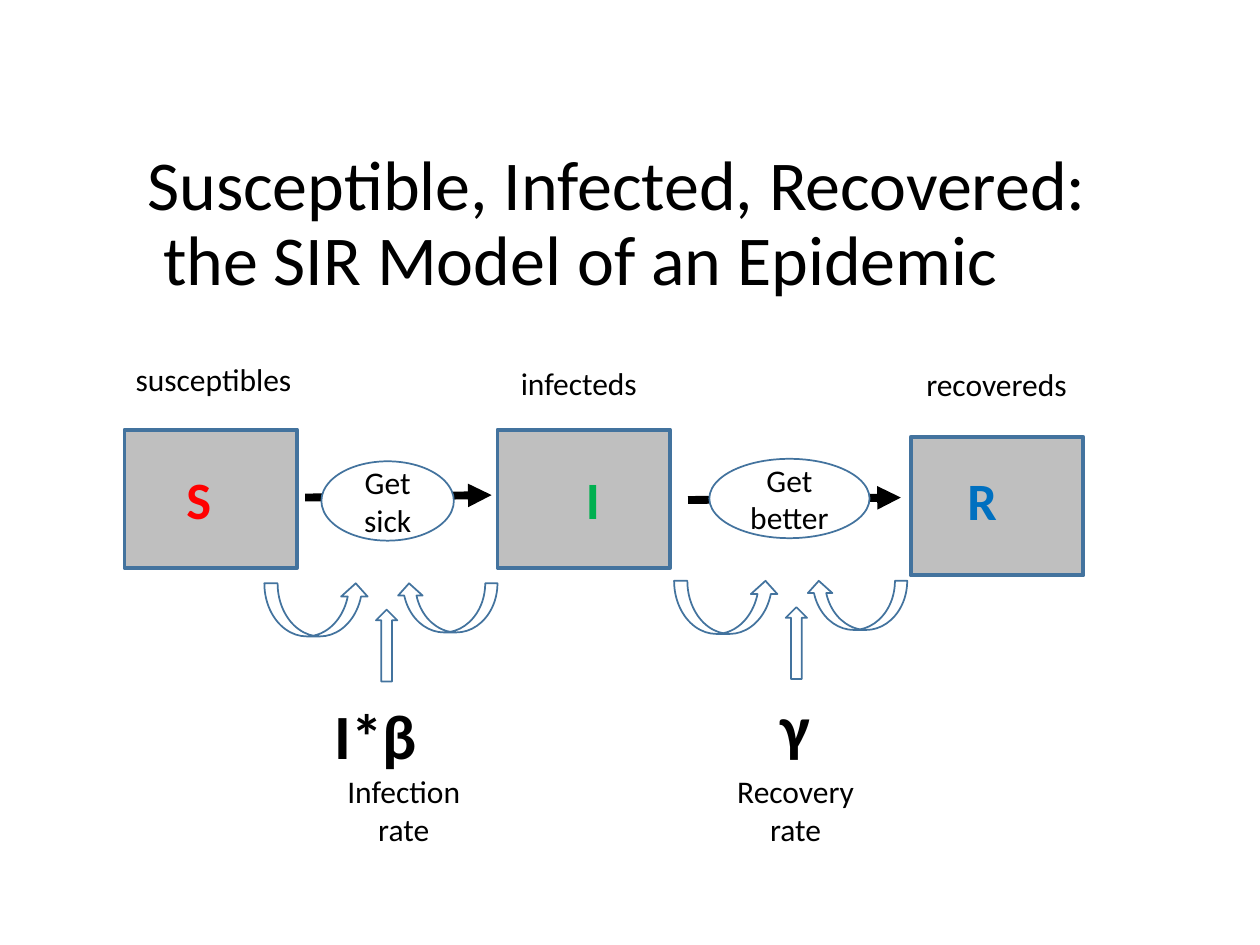
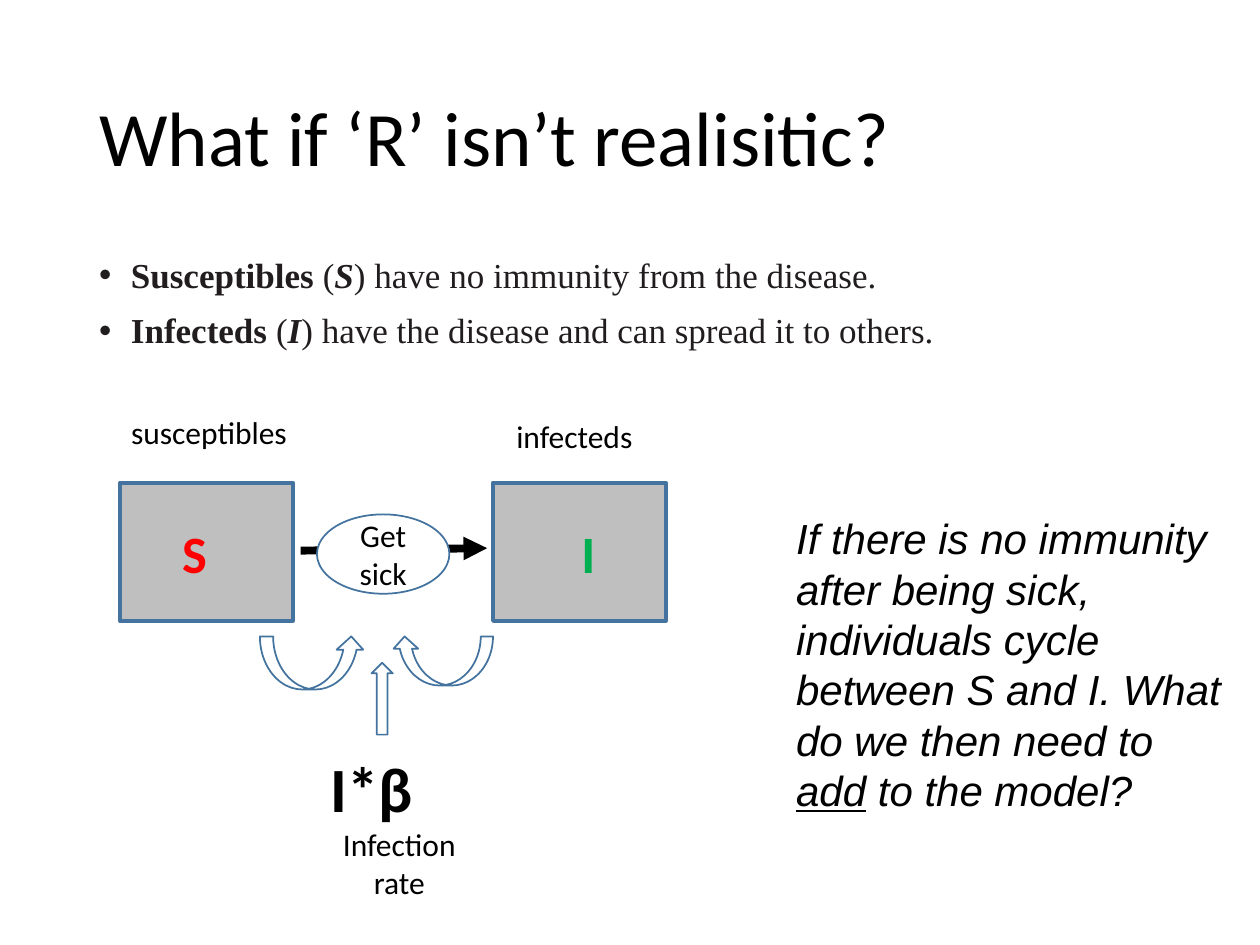
from dataclasses import dataclass

from pptx import Presentation
from pptx import util as u
from pptx.dml.color import RGBColor
from pptx.enum import shapes, text
from pptx.oxml import ns
from pptx.oxml import xmlchemy as xml

COLOURS = {
    "black": "000000",
    "body": "211D1E",
    "white": "FFFFFF",
    "outline": "43739E",
    "box": "BFBFBF",
    "susceptible": "FF0000",
    "infected": "00B050",
    "recovered": "0070C0",
}
SANS, SERIF, ASIDE = "Calibri", "Times New Roman", "Arial"
BOX_SIZE = (3.48, 2.79)
LETTER_SIZE = (2.51, 1.55)
RATE_SIZE = (3.76, 1.8)
OVAL_HEIGHT = 1.6
RATE_NAME_WIDTH = 4.24
KIND = shapes.MSO_SHAPE


@dataclass(frozen=True)
class Span:
    words: str
    bold: bool = False
    italic: bool = False
    underline: bool = False


@dataclass(frozen=True)
class Style:
    size: float
    font: str = SANS
    colour: str = "black"


@dataclass(frozen=True)
class Compartment:
    letter: str
    name: str
    colour: str
    box: tuple[float, float]
    letter_at: tuple[float, float]
    name_at: tuple[float, float]
    name_width: float


@dataclass(frozen=True)
class Flow:
    """A step between two compartments, with the inputs that drive it."""
    action: str
    action_at: tuple[float, float]
    action_width: float
    start: tuple[float, float]
    end: tuple[float, float]
    inputs_at: tuple[float, float]
    rate: str
    rate_at: tuple[float, float]
    rate_name: str
    rate_name_at: tuple[float, float]


SUSCEPTIBLE = Compartment("S", "susceptibles", "susceptible",
                          (2.51, 8.66), (3.51, 9.3), (1.37, 6.83), 5.87)
INFECTED = Compartment("I", "infecteds", "infected",
                       (10.03, 8.66), (11.56, 9.3), (9.55, 6.91), 4.24)
RECOVERED = Compartment("R", "recovereds", "recovered",
                        (18.36, 8.81), (19.25, 9.32), (17.6, 6.93), 4.98)
INFECTION = Flow("Get sick", (6.48, 9.3), 2.67, (6.15, 10.03), (9.91, 9.98),
                 (5.33, 11.76), "I*β", (6.5, 13.92),
                 "Infection rate", (6.02, 15.52))
RECOVERY = Flow("Get better", (14.3, 9.25), 3.23, (13.87, 10.08), (18.16, 10.03),
                (13.59, 11.71), "γ", (15.49, 13.74),
                "Recovery rate", (13.92, 15.52))


def rgb(name: str) -> RGBColor:
    return RGBColor.from_string(COLOURS[name])


def write(frame, paragraphs: list[list[Span]], style: Style) -> None:
    frame.word_wrap = True
    for number, spans in enumerate(paragraphs):
        para = frame.paragraphs[0] if number == 0 else frame.add_paragraph()
        for span in spans:
            run = para.add_run()
            run.text = span.words
            font = run.font
            font.name, font.size = style.font, u.Pt(style.size)
            font.color.rgb = rgb(style.colour)
            font.bold, font.italic = span.bold, span.italic
            font.underline = span.underline


def add_text(page, at, size, paragraphs: list[list[Span]], style: Style):
    box = page.shapes.add_textbox(*map(u.Cm, (*at, *size)))
    write(box.text_frame, paragraphs, style)
    return box.text_frame


def add_title(page, at, size, lines: list[str], points: float) -> None:
    frame = add_text(page, at, size, [[Span(line)] for line in lines], Style(points))
    frame.vertical_anchor = text.MSO_ANCHOR.MIDDLE
    for para in frame.paragraphs:
        para.line_spacing = 0.9


def add_figure(page, kind, at, size, fill: str = "", line_width: float = 0):
    """Draw a preset shape; no fill name or a zero width leaves that part out."""
    figure = page.shapes.add_shape(kind, *map(u.Cm, (*at, *size)))
    figure.shadow.inherit = False
    if fill:
        figure.fill.solid()
        figure.fill.fore_color.rgb = rgb(fill)
    else:
        figure.fill.background()
    if line_width:
        figure.line.color.rgb = rgb("outline")
        figure.line.width = u.Pt(line_width)
    else:
        figure.line.fill.background()
    return figure


def add_oval(page, at, width: float, words: str, line_width: float = 0) -> None:
    oval = add_figure(page, KIND.OVAL, at, (width, OVAL_HEIGHT), "white", line_width)
    write(oval.text_frame, [[Span(words)]], Style(18))
    oval.text_frame.vertical_anchor = text.MSO_ANCHOR.MIDDLE
    oval.text_frame.paragraphs[0].alignment = text.PP_ALIGN.CENTER


def add_arrow(page, start, end) -> None:
    arrow = page.shapes.add_connector(
        shapes.MSO_CONNECTOR.STRAIGHT, *map(u.Cm, (*start, *end)))
    arrow.line.color.rgb = rgb("black")
    arrow.line.width = u.Pt(4.5)
    head = xml.OxmlElement("a:tailEnd")
    head.set("type", "triangle")
    arrow.line._get_or_add_ln().append(head)
    arrow.element.spPr.append(xml.OxmlElement("a:effectLst"))


def add_inputs(page, at) -> None:
    """Draw the two curved arrows and the upright one below a flow."""
    left, top = at
    add_figure(page, KIND.CURVED_UP_ARROW, at, (2.11, 1.07), line_width=1)
    mirrored = add_figure(page, KIND.CURVED_UP_ARROW, (left + 2.67, top),
                          (2.03, 0.99), line_width=1)
    mirrored.element.spPr.get_or_add_xfrm().set("flipH", "1")
    add_figure(page, KIND.UP_ARROW, (left + 2.25, top + 0.53), (0.43, 1.45),
               line_width=1)


def add_model(page, compartments: list[Compartment], flows: list[Flow],
              shift: tuple[float, float] = (0, 0)) -> None:
    def moved(at: tuple[float, float]) -> tuple[float, float]:
        return at[0] + shift[0], at[1] + shift[1]

    for flow in flows:
        add_arrow(page, moved(flow.start), moved(flow.end))
    for part in compartments:
        add_figure(page, KIND.RECTANGLE, moved(part.box), BOX_SIZE, "box", 2.25)
        add_text(page, moved(part.letter_at), LETTER_SIZE,
                 [[Span(part.letter, bold=True)]], Style(30, colour=part.colour))
        add_oval(page, moved(part.name_at), part.name_width, part.name)
    for flow in flows:
        add_text(page, moved(flow.rate_at), RATE_SIZE,
                 [[Span(flow.rate, bold=True)]], Style(36))
        add_inputs(page, moved(flow.inputs_at))
        add_oval(page, moved(flow.action_at), flow.action_width, flow.action, 1)
        add_oval(page, moved(flow.rate_name_at), RATE_NAME_WIDTH, flow.rate_name)


def add_definitions(page) -> None:
    definitions = [
        ("Susceptibles ", "S", ") have no immunity from the disease."),
        ("Infecteds ", "I", ") have the disease and can spread it to others."),
    ]
    paragraphs = [
        [Span(name, bold=True), Span("("), Span(letter, bold=True, italic=True),
         Span(meaning)]
        for name, letter, meaning in definitions
    ]
    frame = add_text(page, (1.75, 5.08), (21.89, 12.09), paragraphs,
                     Style(20, SERIF, "body"))
    indent = u.Cm(0.64)
    for para in frame.paragraphs:
        para.line_spacing = 0.9
        para.space_before = u.Pt(10)
        properties = para._p.get_or_add_pPr()
        properties.set("marL", str(indent))
        properties.set("indent", str(-indent))
        font = xml.OxmlElement("a:buFont")
        font.set("typeface", ASIDE)
        bullet = xml.OxmlElement("a:buChar")
        bullet.set("char", "•")
        properties.extend([font, bullet])


def build_sir_page(page) -> None:
    add_title(page, (2.72, 3.4), (21.59, 2.29),
              ["Susceptible, Infected, Recovered:", " the SIR Model of an Epidemic"], 40)
    add_model(page, [SUSCEPTIBLE, INFECTED, RECOVERED], [INFECTION, RECOVERY])


def build_si_page(page) -> None:
    add_title(page, (1.75, 1.02), (21.89, 3.68), ["What if ‘R’ isn’t realisitic?"], 44)
    add_definitions(page)
    question = [
        Span("If there is no immunity after being sick, individuals cycle "
             "between S and I. What do we then need to ", italic=True),
        Span("add", italic=True, underline=True),
        Span(" to the model?", italic=True),
    ]
    add_text(page, (15.8, 10.21), (9.17, 6.4), [question], Style(24, ASIDE))
    add_model(page, [SUSCEPTIBLE, INFECTED], [INFECTION], shift=(-0.09, 1.07))


def main() -> None:
    deck = Presentation()
    deck.slide_width, deck.slide_height = u.Cm(25.4), u.Cm(19.05)
    blank = deck.slide_layouts[6]
    for build in (build_sir_page, build_si_page):
        page = deck.slides.add_slide(blank)
        page.background.fill.solid()
        page.background.fill.fore_color.rgb = rgb("white")
        build(page)
    deck.save("out.pptx")


if __name__ == "__main__":
    main()
